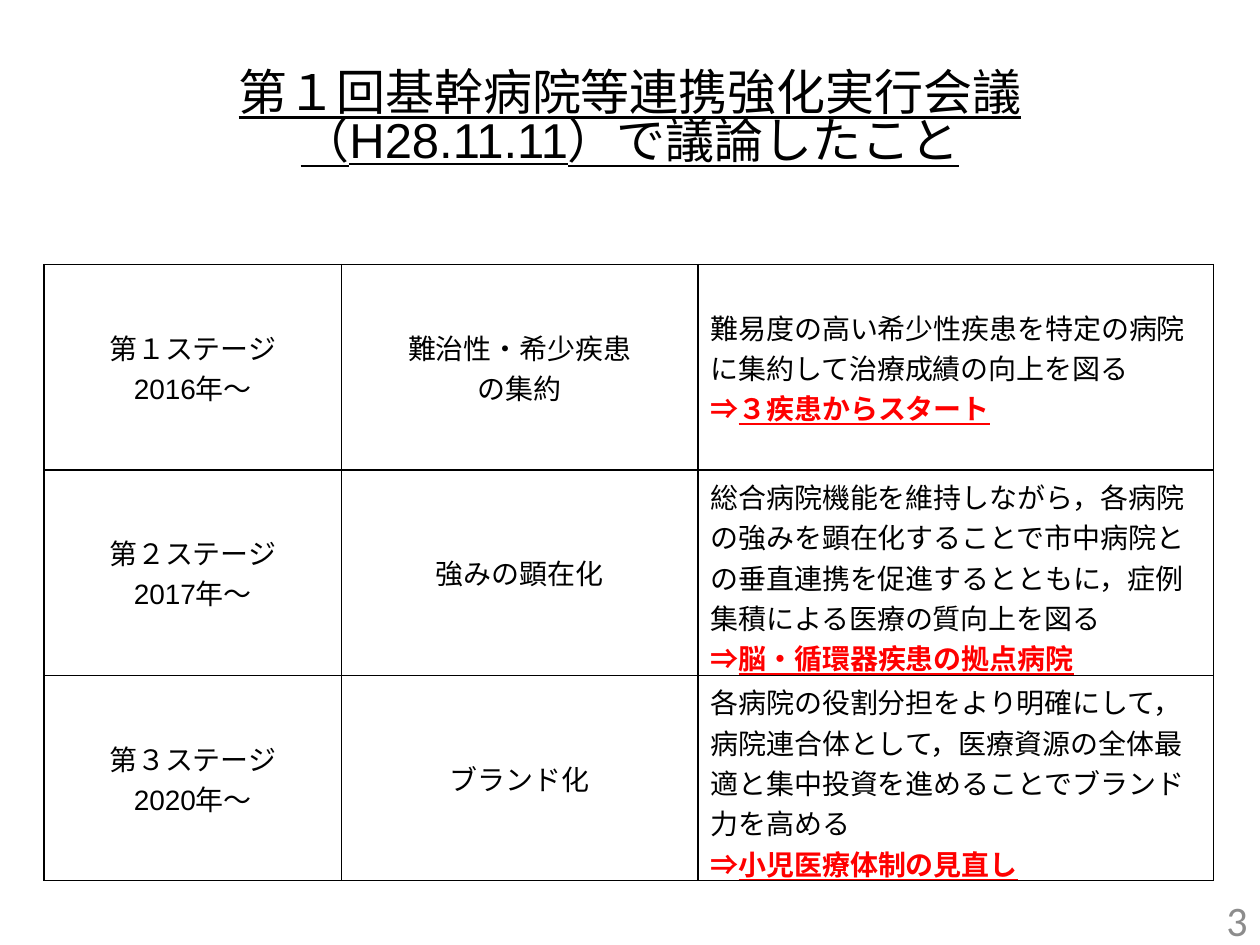
from lxml.etree import SubElement
from pptx import Presentation
from pptx.dml.color import RGBColor
from pptx.enum.text import MSO_ANCHOR, PP_ALIGN
from pptx.oxml.ns import qn
from pptx.util import Inches, Pt

BLACK = RGBColor(0x00, 0x00, 0x00)
RED = RGBColor(0xFF, 0x00, 0x00)
GRAY = RGBColor(0x8C, 0x8C, 0x8C)

TITLE = "第１回基幹病院等連携強化実行会議\v（H28.11.11）で議論したこと"
COLUMN_WIDTHS = (2.36, 2.83, 4.09)
ROW_HEIGHT = 1.63

# stage lines, theme lines, description, outcome
STAGES = [
    (["第１ステージ", "2016年～"], ["難治性・希少疾患", "の集約"],
     "難易度の高い希少性疾患を特定の病院に集約して治療成績の向上を図る",
     "３疾患からスタート"),
    (["第２ステージ", "2017年～"], ["強みの顕在化"],
     "総合病院機能を維持しながら，各病院の強みを顕在化することで市中病院との"
     "垂直連携を促進するとともに，症例集積による医療の質向上を図る",
     "脳・循環器疾患の拠点病院"),
    (["第３ステージ", "2020年～"], ["ブランド化"],
     "各病院の役割分担をより明確にして，病院連合体として，医療資源の全体最適と"
     "集中投資を進めることでブランド力を高める",
     "小児医療体制の見直し"),
]


def format_run(run, size, color=BLACK, name="Arial", bold=False, underline=False):
    font = run.font
    font.size = Pt(size)
    font.name = name
    font.color.rgb = color
    font.bold = bold
    font.underline = underline


def add_text(slide, box, text, alignment, **style):
    text_frame = slide.shapes.add_textbox(*map(Inches, box)).text_frame
    text_frame.word_wrap = True
    text_frame.vertical_anchor = MSO_ANCHOR.MIDDLE
    paragraph = text_frame.paragraphs[0]
    paragraph.text = text
    paragraph.alignment = alignment
    for run in paragraph.runs:
        format_run(run, **style)
    return paragraph


def add_borders(cell):
    properties = cell._tc.get_or_add_tcPr()
    for index, side in enumerate(("a:lnL", "a:lnR", "a:lnT", "a:lnB")):
        line = properties.makeelement(qn(side), {"w": str(Pt(1))})
        fill = SubElement(line, qn("a:solidFill"))
        SubElement(fill, qn("a:srgbClr"), val=str(BLACK))
        properties.insert(index, line)


def fill_centered(cell, lines):
    cell.text_frame.text = "\n".join(lines)
    for paragraph in cell.text_frame.paragraphs:
        paragraph.alignment = PP_ALIGN.CENTER
        format_run(paragraph.runs[0], 16)


def fill_description(cell, description, outcome):
    text_frame = cell.text_frame
    text_frame.text = description
    format_run(text_frame.paragraphs[0].runs[0], 16)
    paragraph = text_frame.add_paragraph()
    for text, underline in (("⇒", False), (outcome, True)):
        run = paragraph.add_run()
        run.text = text
        format_run(run, 16, RED, bold=True, underline=underline)


def add_stage_table(slide, left, top):
    width, height = sum(COLUMN_WIDTHS), ROW_HEIGHT * len(STAGES)
    table = slide.shapes.add_table(
        len(STAGES), len(COLUMN_WIDTHS),
        Inches(left), Inches(top), Inches(width), Inches(height)).table
    table.first_row = table.horz_banding = False
    for column, column_width in zip(table.columns, COLUMN_WIDTHS):
        column.width = Inches(column_width)
    for row, (stage, theme, description, outcome) in zip(table.rows, STAGES):
        row.height = Inches(ROW_HEIGHT)
        stage_cell, theme_cell, description_cell = row.cells
        fill_centered(stage_cell, stage)
        fill_centered(theme_cell, theme)
        fill_description(description_cell, description, outcome)
        for cell in row.cells:
            cell.vertical_anchor = MSO_ANCHOR.MIDDLE
            cell.fill.background()
            add_borders(cell)


def main():
    presentation = Presentation()
    presentation.slide_width = Inches(10)
    presentation.slide_height = Inches(7.5)
    slide = presentation.slides.add_slide(presentation.slide_layouts[6])
    add_text(slide, (7.67, 7.1, 2.33, 0.4), "3", PP_ALIGN.RIGHT,
             size=24, color=GRAY, name="Calibri")
    title = add_text(slide, (0, 0.44, 10, 1.02), TITLE, PP_ALIGN.CENTER,
                     size=28, underline=True)
    title.line_spacing = 0.83
    add_stage_table(slide, 0.35, 2.1)
    presentation.save("out.pptx")


if __name__ == "__main__":
    main()
